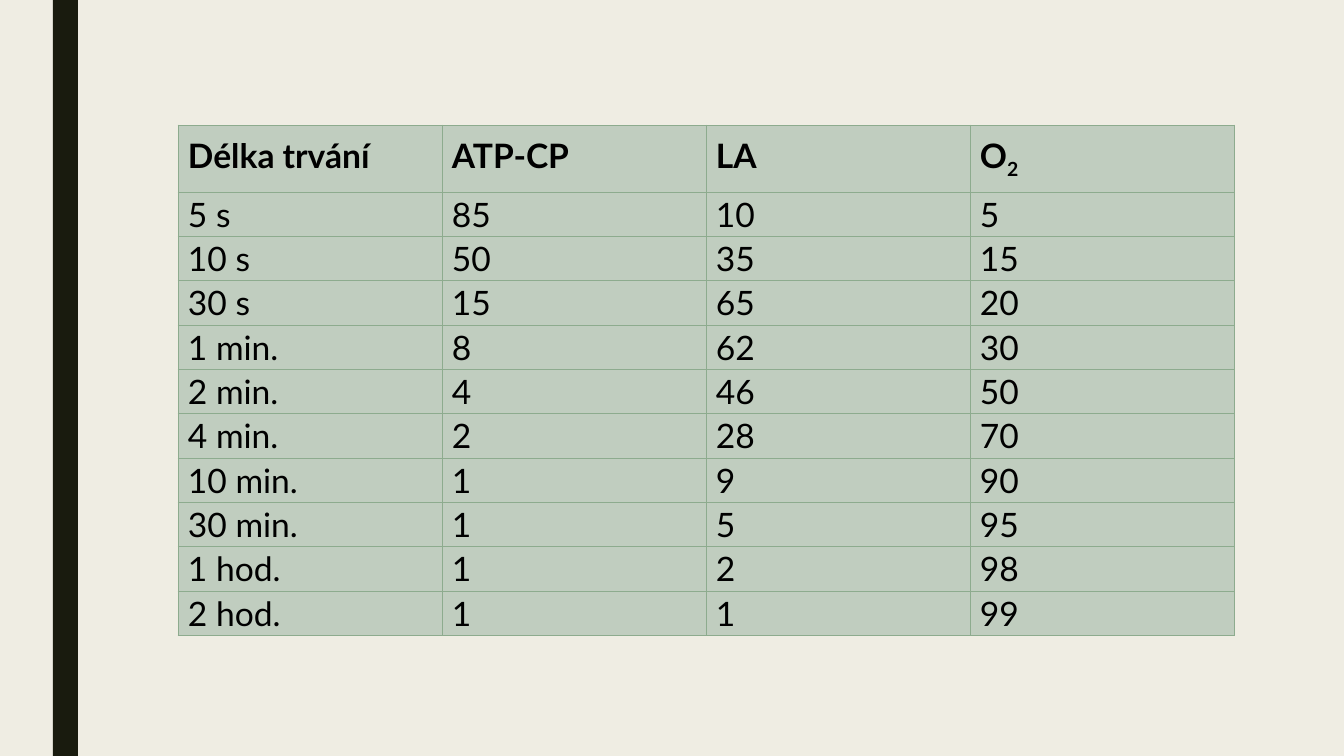
from dataclasses import dataclass
from lxml import etree
from pptx import Presentation as Deck
from pptx.dml.color import RGBColor as Color
from pptx.enum.shapes import MSO_SHAPE as Kind
from pptx.oxml.ns import qn
from pptx.util import Emu, Pt


@dataclass(frozen=True)
class Theme:
    back: str = "EFEDE3"
    bar: str = "191B0E"
    cell: str = "C0CDBF"
    rule: str = "8DAB8E"
    ink: str = "000000"
    font: str = "Lato"
    size: int = 24
    line: float = 0.5


LOOK = Theme()
SCALE = 914400 / 100.8

HEAD = ["Délka trvání", "ATP-CP", "LA", "O"]
ROWS = [
    ["5 s", 85, 10, 5],
    ["10 s", 50, 35, 15],
    ["30 s", 15, 65, 20],
    ["1 min.", 8, 62, 30],
    ["2 min.", 4, 46, 50],
    ["4 min.", 2, 28, 70],
    ["10 min.", 1, 9, 90],
    ["30 min.", 1, 5, 95],
    ["1 hod.", 1, 2, 98],
    ["2 hod.", 1, 1, 99],
]


def px(n):
    return Emu(round(n * SCALE))


def paint(fill, tone):
    fill.solid()
    fill.fore_color.rgb = Color.from_string(tone)


def write(para, text, bold=False, base=0):
    run = para.add_run()
    run.text = str(text)
    font = run.font
    font.name, font.size, font.bold = LOOK.font, Pt(LOOK.size), bold
    font.color.rgb = Color.from_string(LOOK.ink)
    if base:
        font._element.set("baseline", str(base * 1000))


def add_bar(slide, x, y, w, h):
    bar = slide.shapes.add_shape(Kind.RECTANGLE, px(x), px(y), px(w), px(h))
    bar.shadow.inherit = False
    paint(bar.fill, LOOK.bar)
    bar.line.fill.background()


def edge(cell):
    # Borders must come before the cell fill
    props = cell._tc.get_or_add_tcPr()
    for side in ("lnL", "lnR", "lnT", "lnB"):
        line = etree.SubElement(props, qn(f"a:{side}"), w=str(Pt(LOOK.line)))
        fill = etree.SubElement(line, qn("a:solidFill"))
        etree.SubElement(fill, qn("a:srgbClr"), val=LOOK.rule)


def set_cell(cell, text, bold, pad):
    cell.margin_left = cell.margin_right = px(10)
    cell.margin_top = cell.margin_bottom = px(pad)
    edge(cell)
    paint(cell.fill, LOOK.cell)
    write(cell.text_frame.paragraphs[0], text, bold=bold)


def add_grid(slide, x, y, wide, top, tall):
    data = [HEAD] + ROWS
    frame = slide.shapes.add_table(
        len(data), len(HEAD), px(x), px(y),
        px(wide * len(HEAD)), px(top + tall * len(ROWS)))
    grid = frame.table
    grid.horz_banding = False
    for col in grid.columns:
        col.width = px(wide)
    for r, row in enumerate(data):
        first = r == 0
        grid.rows[r].height = px(top if first else tall)
        for c, text in enumerate(row):
            set_cell(grid.cell(r, c), text, first, 10 if first else 2)
    # Subscript of the oxygen heading
    last = grid.cell(0, len(HEAD) - 1)
    write(last.text_frame.paragraphs[0], 2, bold=True, base=-25)


def main():
    deck = Deck()
    deck.slide_width, deck.slide_height = px(1344), px(756)
    slide = deck.slides.add_slide(deck.slide_layouts[6])
    paint(slide.background.fill, LOOK.back)
    # Side bar
    add_bar(slide, 53, 0, 25, 756)
    # Energy shares by duration
    add_grid(slide, 178, 125, wide=264, top=67, tall=44)
    deck.save("out.pptx")


if __name__ == "__main__":
    main()
